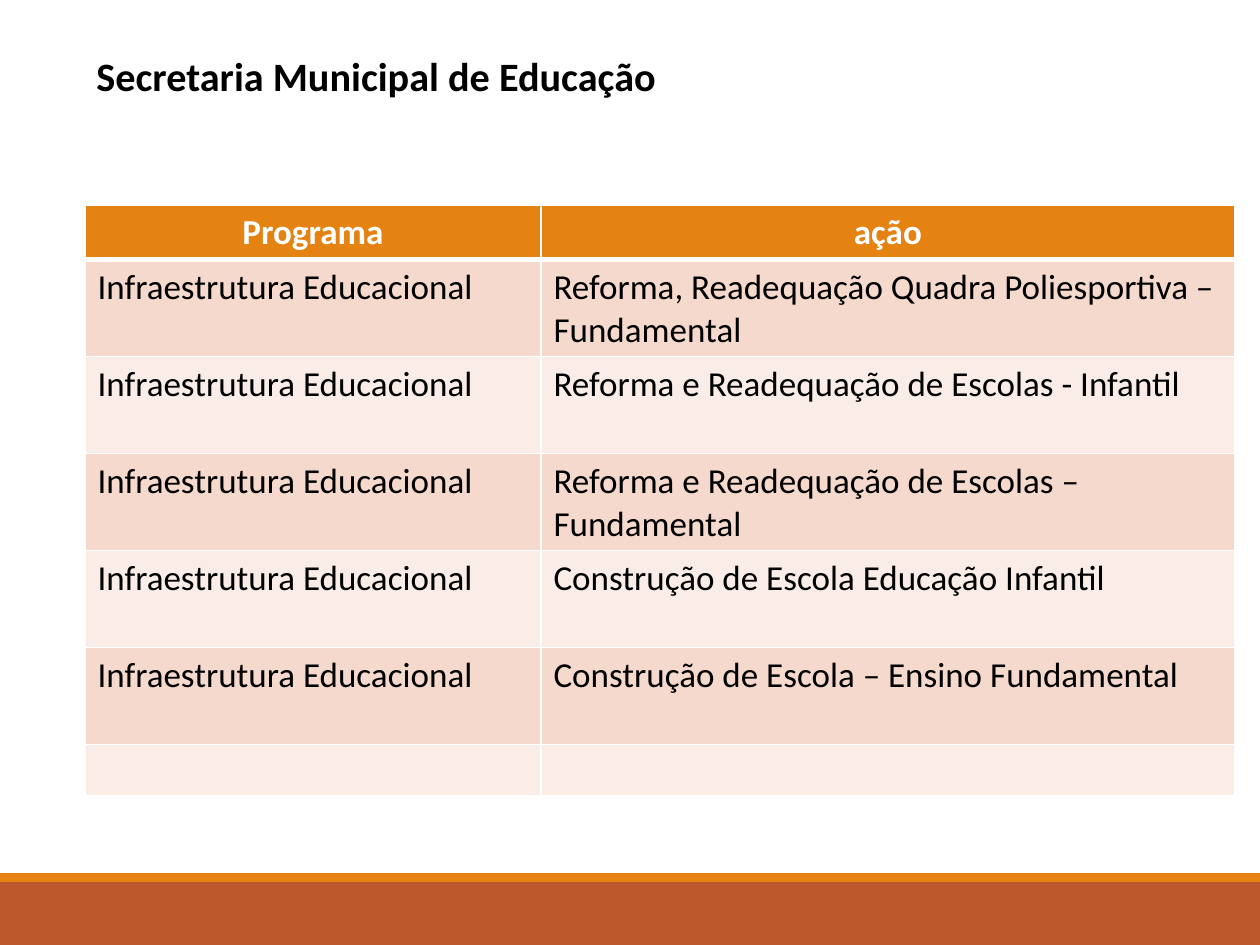
from dataclasses import dataclass

from lxml import etree
from pptx import Presentation
from pptx import util as u
from pptx.dml import color
from pptx.enum import shapes, text
from pptx.oxml import ns

PX = u.Inches(1) / 126
FONT = "Calibri"
COLORS = {
    "white": "FFFFFF",
    "black": "000000",
    "orange": "E48312",
    "rust": "BD582C",
    "band_dark": "F5D9CC",
    "band_light": "FAEDE7",
}


@dataclass
class Bar:
    top: int
    height: int
    fill: str


@dataclass
class Action:
    program: str
    action: str
    height: int = 97


FOOTER = [Bar(882, 63, "rust"), Bar(873, 9, "orange")]
INFRA = "Infraestrutura Educacional"
ACTIONS = [
    Action("Programa", "ação", 53),
    Action(INFRA, "Reforma, Readequação Quadra Poliesportiva – Fundamental"),
    Action(INFRA, "Reforma e Readequação de Escolas - Infantil"),
    Action(INFRA, "Reforma e Readequação de Escolas – Fundamental"),
    Action(INFRA, "Construção de Escola Educação Infantil"),
    Action(INFRA, "Construção de Escola – Ensino Fundamental"),
    Action("", "", 51),
]
COLUMNS = [456, 694]


def px(length: int) -> int:
    return round(length * PX)


def rgb(name: str) -> color.RGBColor:
    return color.RGBColor.from_string(COLORS[name])


def style_runs(frame, size: int, ink: str, bold: bool) -> None:
    for run in frame.paragraphs[0].runs:
        run.font.name = FONT
        run.font.size = u.Pt(size)
        run.font.bold = bold
        run.font.color.rgb = rgb(ink)


def draw_bar(slide, bar: Bar) -> None:
    band = slide.shapes.add_shape(
        shapes.MSO_SHAPE.RECTANGLE, 0, px(bar.top), px(1260), px(bar.height))
    band.shadow.inherit = False
    band.fill.solid()
    band.fill.fore_color.rgb = rgb(bar.fill)
    band.line.fill.background()


def draw_title(slide, wording: str) -> None:
    title = slide.shapes.add_textbox(px(84), px(45), px(1063), px(62))
    frame = title.text_frame
    frame.word_wrap = True
    frame.auto_size = text.MSO_AUTO_SIZE.SHAPE_TO_FIT_TEXT
    frame.text = wording
    style_runs(frame, 23, "black", True)


def add_borders(cell, top: int, bottom: int) -> None:
    properties = cell._tc.get_or_add_tcPr()
    for side, points in (("L", 1), ("R", 1), ("T", top), ("B", bottom)):
        edge = etree.SubElement(properties, ns.qn(f"a:ln{side}"), w=str(u.Pt(points)))
        fill = etree.SubElement(edge, ns.qn("a:solidFill"))
        etree.SubElement(fill, ns.qn("a:srgbClr"), val=COLORS["white"])


def fill_cell(cell, wording: str, row: int) -> None:
    header = row == 0
    add_borders(cell, 3 if row == 1 else 1, 3 if header else 1)
    cell.fill.solid()
    band = "band_dark" if row % 2 else "band_light"
    cell.fill.fore_color.rgb = rgb("orange" if header else band)
    cell.text_frame.text = wording
    style_runs(cell.text_frame, 20, "white" if header else "black", header)
    if header:
        cell.text_frame.paragraphs[0].alignment = text.PP_ALIGN.CENTER


def draw_actions(slide, actions: list[Action]) -> None:
    height = sum(action.height for action in actions)
    table = slide.shapes.add_table(
        len(actions), len(COLUMNS), px(85), px(205), px(sum(COLUMNS)), px(height)).table
    for column, width in zip(table.columns, COLUMNS):
        column.width = px(width)
    for row, action in enumerate(actions):
        table.rows[row].height = px(action.height)
        for column, wording in enumerate((action.program, action.action)):
            fill_cell(table.cell(row, column), wording, row)


def main() -> None:
    deck = Presentation()
    deck.slide_width, deck.slide_height = px(1260), px(945)
    slide = deck.slides.add_slide(deck.slide_layouts[6])
    for bar in FOOTER:
        draw_bar(slide, bar)
    draw_title(slide, "Secretaria Municipal de Educação")
    draw_actions(slide, ACTIONS)
    deck.save("out.pptx")


if __name__ == "__main__":
    main()
